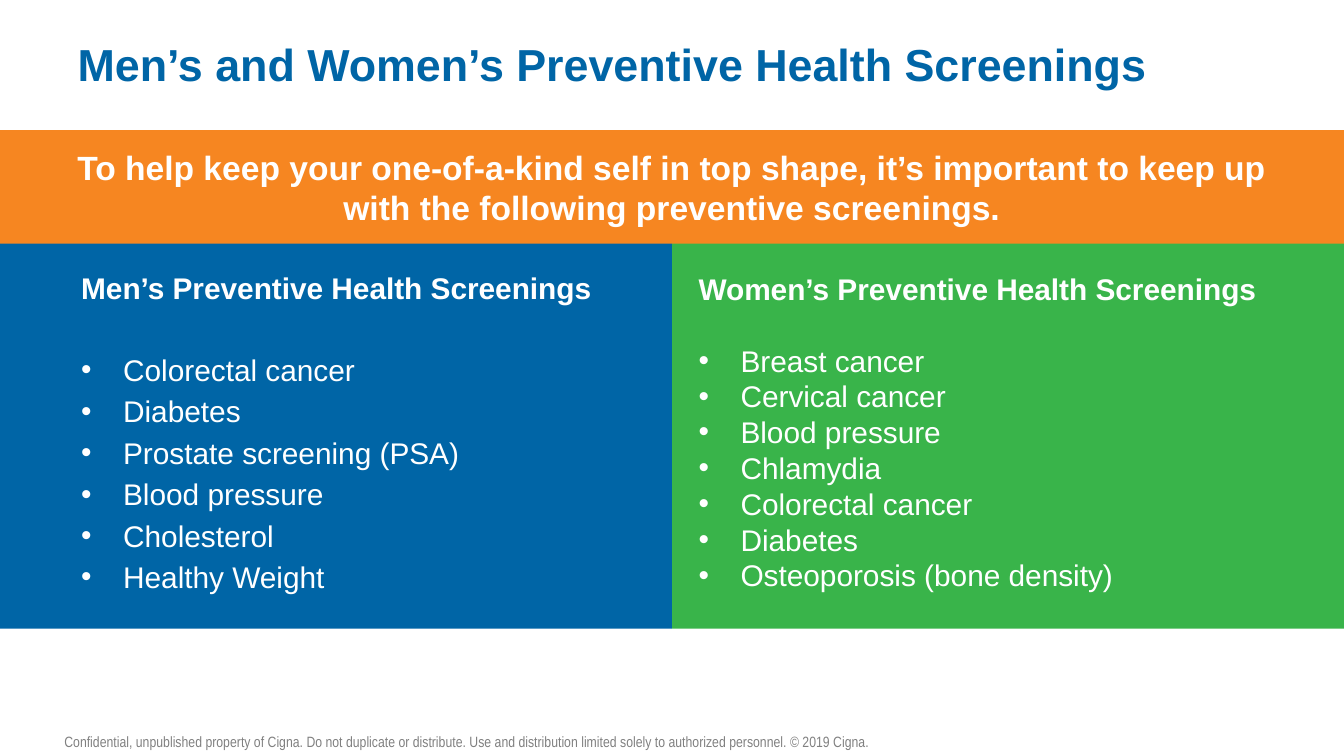
from pptx import Presentation
from pptx.dml.color import RGBColor
from pptx.enum.shapes import MSO_SHAPE
from pptx.enum.text import MSO_ANCHOR, PP_ALIGN
from pptx.oxml.ns import qn
from pptx.util import Pt
from lxml import etree

RECT = MSO_SHAPE.RECTANGLE
MIDDLE = MSO_ANCHOR.MIDDLE
LEFT, CENTER = PP_ALIGN.LEFT, PP_ALIGN.CENTER
PX = 9525
BLUE, GREEN, ORANGE = "0065A6", "39B44A", "F68621"
WHITE, GRAY = "FFFFFF", "808080"


def color(text):
    return RGBColor.from_string(text)


def write(para, text, size, tint, bold=False, face="Arial", align=LEFT):
    para.text = text
    para.alignment = align
    font = para.font
    font.name, font.size, font.bold = face, Pt(size), bold
    font.color.rgb = color(tint)


prs = Presentation()
prs.slide_width, prs.slide_height = 960 * PX, 540 * PX
slide = prs.slides.add_slide(prs.slide_layouts[6])
shapes = slide.shapes

title = shapes.add_textbox(46 * PX, 20 * PX, 864 * PX, 51 * PX).text_frame
title.word_wrap = True
title.vertical_anchor = MIDDLE
write(title.paragraphs[0], "Men’s and Women’s Preventive Health Screenings", 24, BLUE, True)

women = ["Breast cancer", "Cervical cancer", "Blood pressure", "Chlamydia",
         "Colorectal cancer", "Diabetes", "Osteoporosis (bone density)"]
men = ["Colorectal cancer", "Diabetes", "Prostate screening (PSA)",
       "Blood pressure", "Cholesterol", "Healthy Weight"]
lead = ("To help keep your one-of-a-kind self in top shape, it’s important "
        "to keep up with the following preventive screenings.")

panels = [
    ((480, 168, 480, 281), GREEN, (19, 29, 29, 29), 16, LEFT,
     "Women’s Preventive Health Screenings", women, 19, 0),
    ((0, 168, 480, 281), BLUE, (58, 5, 10, 5), 16, LEFT,
     "Men’s Preventive Health Screenings", men, 25, 3),
    ((0, 93, 960, 81), ORANGE, (29, 5, 29, 5), 18, CENTER, lead, [], 0, 0),
]
for place, fill, inset, size, align, head, items, gap, after in panels:
    panel = shapes.add_shape(RECT, *[n * PX for n in place])
    panel.shadow.inherit = False
    panel.fill.solid()
    panel.fill.fore_color.rgb = color(fill)
    panel.line.fill.background()
    frame = panel.text_frame
    frame.word_wrap = True
    frame.vertical_anchor = MIDDLE
    (frame.margin_left, frame.margin_top,
     frame.margin_right, frame.margin_bottom) = [n * PX for n in inset]
    first = frame.paragraphs[0]
    first.space_after = Pt(gap)
    write(first, head, size, WHITE, True, align=align)
    for item in items:
        para = frame.add_paragraph()
        para.space_after = Pt(after)
        props = para._p.get_or_add_pPr()
        props.set("marL", str(30 * PX))
        props.set("indent", str(-30 * PX))
        etree.SubElement(props, qn("a:buFont")).set("typeface", "Arial")
        etree.SubElement(props, qn("a:buChar")).set("char", "•")
        write(para, item, size, WHITE)

foot = shapes.add_textbox(46 * PX, 523 * PX, 580 * PX, 13 * PX).text_frame
foot.word_wrap = False
foot.margin_left = foot.margin_top = foot.margin_right = foot.margin_bottom = 0
write(foot.paragraphs[0],
      "Confidential, unpublished property of Cigna. Do not duplicate or distribute. "
      "Use and distribution limited solely to authorized personnel. © 2019 Cigna.",
      8, GRAY, face="Arial Narrow")

prs.save("out.pptx")
